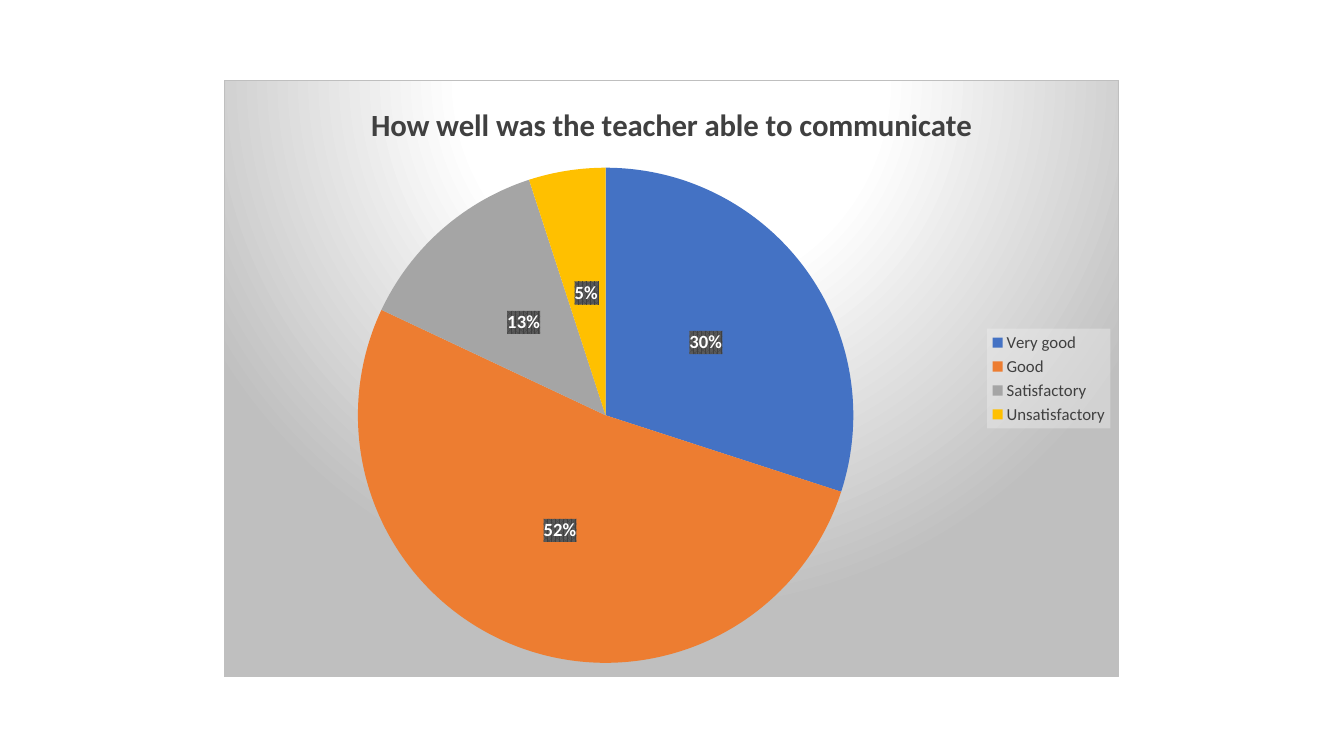
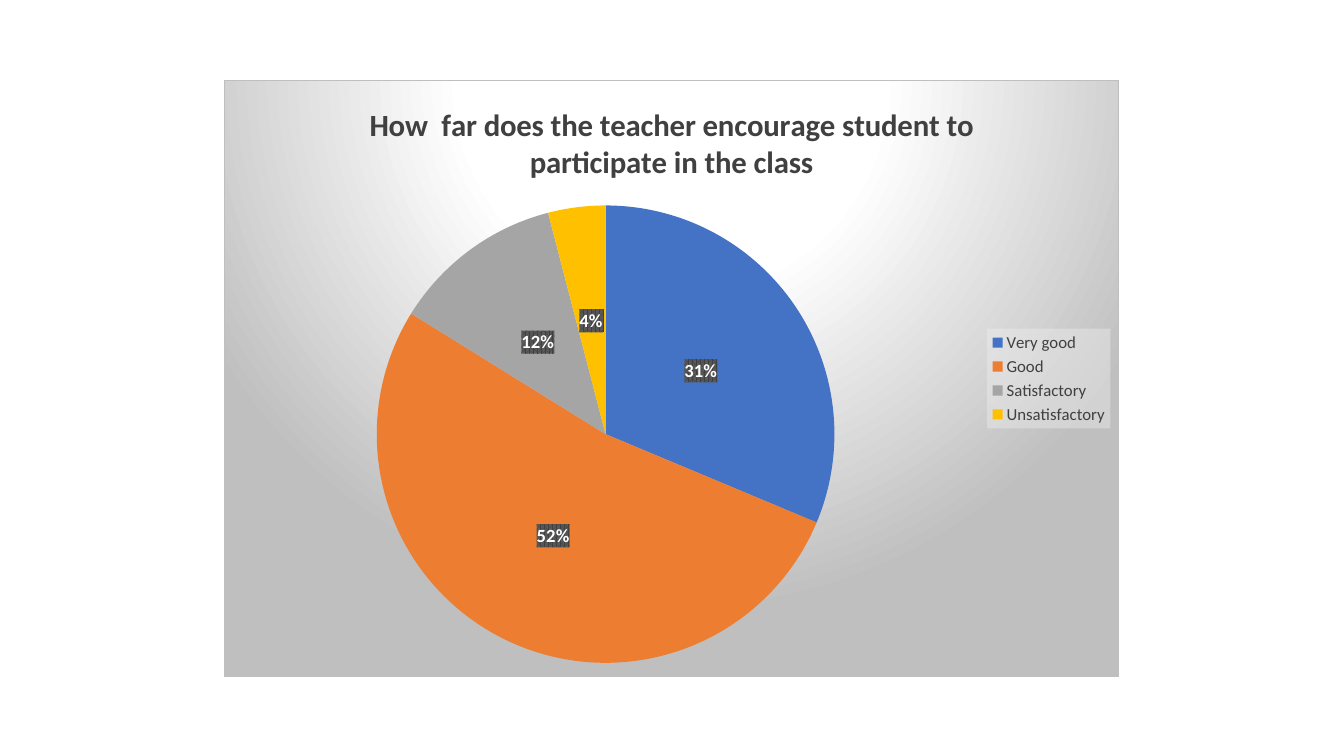
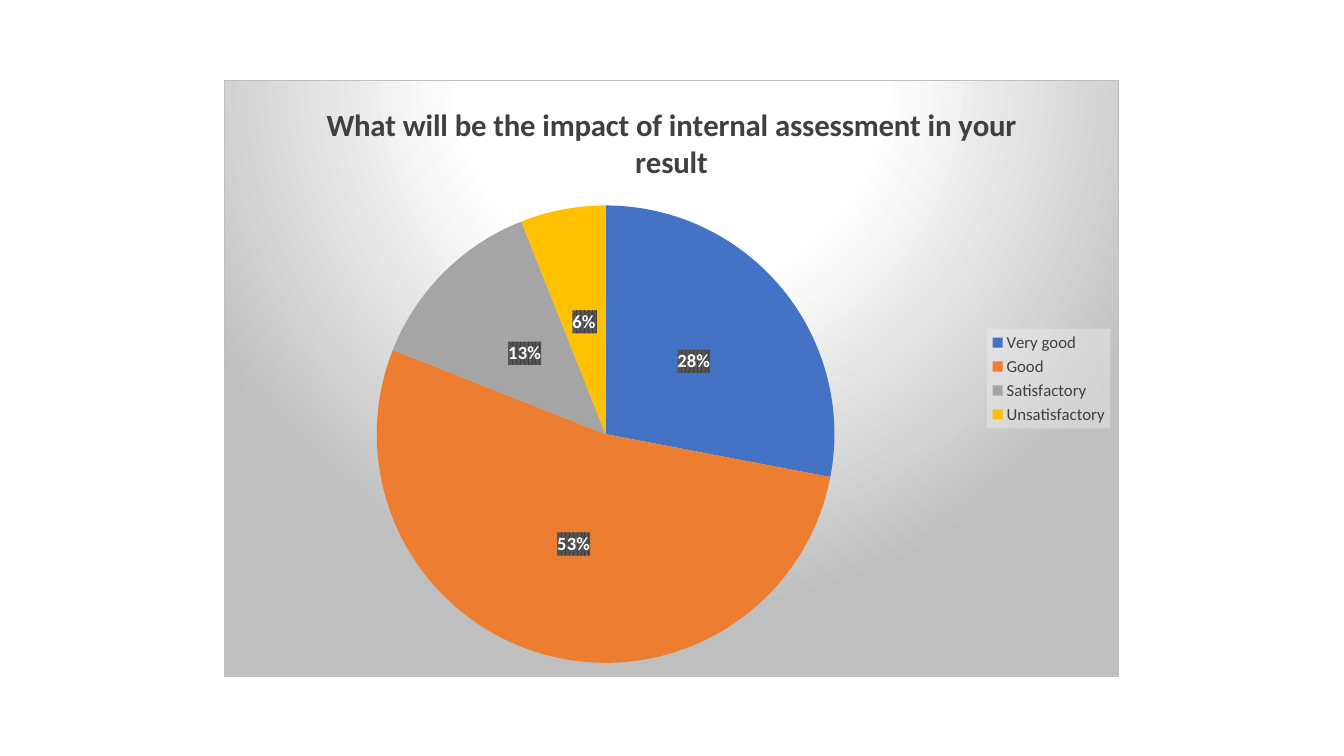
"""Build three slides of pie charts on how students rate their teaching."""

from dataclasses import dataclass
from typing import Any

from pptx import Presentation
from pptx.chart.data import CategoryChartData
from pptx.dml.color import RGBColor
from pptx.enum.chart import XL_CHART_TYPE, XL_LABEL_POSITION, XL_LEGEND_POSITION
from pptx.oxml import parse_xml
from pptx.oxml.ns import nsdecls, qn
from pptx.util import Emu, Pt

PIE = XL_CHART_TYPE.PIE
CENTER = XL_LABEL_POSITION.CENTER
RIGHT = XL_LEGEND_POSITION.RIGHT

SCALE = 9525
SIZE = (1280, 720)
FRAME = (213, 76, 853, 569)
FONT = "Calibri"
HUES = {
    "ink": "404040",
    "stripe": "595959",
    "black": "000000",
    "white": "FFFFFF",
    "edge": "BFBFBF",
    "pale": "F2F2F2",
}
RATINGS = {
    "Very good": "4472C4",
    "Good": "ED7D31",
    "Satisfactory": "A5A5A5",
    "Unsatisfactory": "FFC000",
}

GLOW = f"""<a:gradFill><a:gsLst>
<a:gs pos="0"><a:srgbClr val="{HUES['white']}"/></a:gs>
<a:gs pos="39000"><a:srgbClr val="{HUES['white']}"/></a:gs>
<a:gs pos="100000"><a:srgbClr val="{HUES['edge']}"/></a:gs>
</a:gsLst><a:path path="circle">
<a:fillToRect l="50000" t="-80000" r="50000" b="180000"/>
</a:path></a:gradFill>
<a:ln w="9525"><a:solidFill><a:srgbClr val="{HUES['edge']}"/></a:solidFill></a:ln>"""
VEIL = f"""<a:solidFill><a:srgbClr val="{HUES['pale']}">
<a:alpha val="39000"/></a:srgbClr></a:solidFill><a:ln><a:noFill/></a:ln>"""
WEAVE = f"""<a:pattFill prst="pct75">
<a:fgClr><a:srgbClr val="{HUES['ink']}"/></a:fgClr>
<a:bgClr><a:srgbClr val="{HUES['stripe']}"/></a:bgClr>
</a:pattFill><a:ln><a:noFill/></a:ln>"""


@dataclass(frozen=True)
class Survey:
    """One question, its shares in percent and the name of its series."""

    title: str
    shares: tuple[int, ...]
    series: str = ""


SURVEYS = (
    Survey("How well was the teacher able to communicate", (30, 52, 13, 5)),
    Survey(
        "How  far does the teacher encourage student to participate in the class",
        (31, 52, 12, 4),
        "Series 1",
    ),
    Survey(
        "What will be the impact of internal assessment in your result",
        (28, 53, 13, 6),
    ),
)


def px(count: int) -> Emu:
    """Turn pixels into EMU."""
    return Emu(count * SCALE)


def style(font: Any, size: float, hue: str = "ink", bold: bool = False) -> None:
    """Set the face, size, colour and weight of a font."""
    font.name = FONT
    font.size = Pt(size)
    font.bold = bold
    font.color.rgb = RGBColor.from_string(HUES[hue])


def write(frame: Any, text: str, **look: Any) -> None:
    """Put formatted text into a text frame."""
    run = frame.paragraphs[0].add_run()
    run.text = text
    style(run.font, **look)


def paint(part: Any, fill: str) -> None:
    """Give a chart part its fill and line, just ahead of its text format."""
    shape = parse_xml(f"<c:spPr {nsdecls('c', 'a')}>{fill}</c:spPr>")
    part.find(qn("c:txPr")).addprevious(shape)


def draw(slide: Any, survey: Survey) -> None:
    """Draw the pie chart of one survey question."""
    data = CategoryChartData(number_format="General")
    data.categories = list(RATINGS)
    data.add_series(survey.series or survey.title, survey.shares)
    chart = slide.shapes.add_chart(PIE, *map(px, FRAME), data).chart
    style(chart.font, 10, "black")
    paint(chart._chartSpace, GLOW)

    chart.has_title = True
    write(chart.chart_title.text_frame, survey.title, size=22, bold=True)

    chart.has_legend = True
    legend = chart.legend
    legend.position = RIGHT
    legend.include_in_layout = False
    style(legend.font, 12)
    paint(legend._element, VEIL)

    plot = chart.plots[0]
    plot.vary_by_categories = True
    series = plot.series[0]
    for index, hue in enumerate(RATINGS.values()):
        fill = series.points[index].format.fill
        fill.solid()
        fill.fore_color.rgb = RGBColor.from_string(hue)

    labels = series.data_labels
    labels.show_value = True
    labels.number_format = '0"%"'
    labels.number_format_is_linked = False
    labels.position = CENTER
    style(labels.font, 13.3, "white", bold=True)
    paint(labels._element, WEAVE)


def main() -> None:
    """Build and save the deck."""
    deck = Presentation()
    deck.slide_width, deck.slide_height = map(px, SIZE)
    for survey in SURVEYS:
        draw(deck.slides.add_slide(deck.slide_layouts[6]), survey)
    deck.save("out.pptx")


if __name__ == "__main__":
    main()
